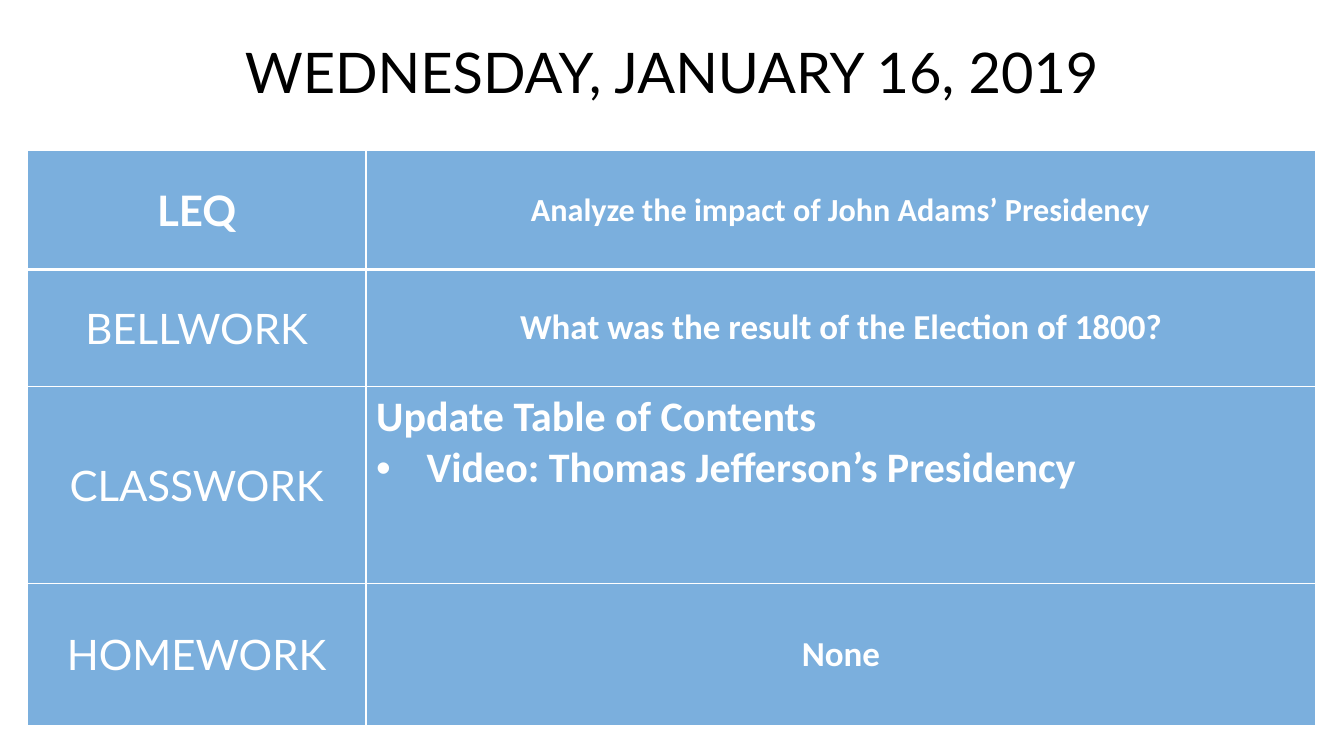
from pptx import Presentation
from pptx.dml.color import RGBColor as RGB
from pptx.enum.text import MSO_ANCHOR as ANCHOR, MSO_AUTO_SIZE as AUTO, PP_ALIGN as ALIGN
from pptx.oxml import parse_xml
from pptx.oxml.ns import nsdecls, qn
from pptx.util import Pt

COLORS = {"text": "FFFFFF", "title": "000000", "cell": "5B9BD5", "panel": "FFFFFF", "border": "FFFFFF"}
LABEL = {"name": "Lato", "size": Pt(30), "bold": False}
HEAD = {**LABEL, "bold": True}
LEFT, WIDTH = 19.5, 920.5


def detail(size):
    return {"name": "Calibri", "size": Pt(size), "bold": True}


AGENDA = [
    (85, "LEQ", HEAD, ["Analyze the impact of John Adams’ Presidency"], 23),
    (83.5, "BELLWORK", LABEL, ["What was the result of the Election of 1800?"], 25),
    (141, "CLASSWORK", LABEL, ["Update Table of Contents", "Video: Thomas Jefferson’s Presidency"], 30),
    (101, "HOMEWORK", LABEL, ["None"], 25),
]


class Deck:
    """Holds the style and the current slide."""

    def __init__(self):
        self.prs = Presentation()
        self.prs.slide_width, self.prs.slide_height = Pt(960), Pt(540)
        self.s = self.prs.slides.add_slide(self.prs.slide_layouts[5])

    def fill(self, obj, props, color, alpha):
        obj.fill.solid()
        obj.fill.fore_color.rgb = RGB.from_string(COLORS[color])
        clr = next(props.iter(qn("a:srgbClr")))
        clr.append(parse_xml(f'<a:alpha {nsdecls("a")} val="{alpha * 1000}"/>'))

    def text(self, p, text, color, align, fmt):
        p.alignment = align
        r = p.add_run()
        r.text = text
        r.font.color.rgb = RGB.from_string(COLORS[color])
        for key, value in fmt.items():
            setattr(r.font, key, value)

    def title(self, text, top, height):
        sp = self.s.shapes.title
        sp.left, sp.top, sp.width, sp.height = Pt(LEFT), Pt(top), Pt(WIDTH), Pt(height)
        tf = sp.text_frame
        for key, value in {"auto_size": AUTO.NONE, "word_wrap": True, "vertical_anchor": ANCHOR.MIDDLE}.items():
            setattr(tf, key, value)
        self.text(tf.paragraphs[0], text, "title", ALIGN.CENTER, {"name": "Lato", "size": Pt(40)})
        self.fill(sp, sp._element.spPr, "panel", 65)

    def borders(self, cell, top, bottom):
        tcPr = cell._tc.get_or_add_tcPr()
        for i, (side, width) in enumerate({"L": 1, "R": 1, "T": top, "B": bottom}.items()):
            tcPr.insert(i, parse_xml(
                f'<a:ln{side} {nsdecls("a")} w="{int(Pt(width))}"><a:solidFill>'
                f'<a:srgbClr val="{COLORS["border"]}"/></a:solidFill></a:ln{side}>'))

    def bullet(self, p, indent):
        pPr = p._p.get_or_add_pPr()
        pPr.set("marL", str(int(Pt(indent))))
        pPr.set("indent", str(int(Pt(-indent))))
        pPr.append(parse_xml(f'<a:buFont {nsdecls("a")} typeface="Arial"/>'))
        pPr.append(parse_xml(f'<a:buChar {nsdecls("a")} char="•"/>'))

    def cell(self, cell, lines, fmt):
        is_list = len(lines) > 1
        cell.vertical_anchor = ANCHOR.TOP if is_list else ANCHOR.MIDDLE
        tf = cell.text_frame
        for i, line in enumerate(lines):
            p = tf.add_paragraph() if i else tf.paragraphs[0]
            if i:
                self.bullet(p, 36)
            self.text(p, line, "text", ALIGN.LEFT if is_list else ALIGN.CENTER, fmt)
        self.fill(cell, cell._tc.get_or_add_tcPr(), "cell", 80)

    def table(self, rows, top, widths):
        height = sum(row[0] for row in rows)
        tbl = self.s.shapes.add_table(len(rows), 2, Pt(LEFT), Pt(top), Pt(WIDTH), Pt(height)).table
        tbl.horz_banding = False
        for col, width in zip(tbl.columns, widths):
            col.width = Pt(width)
        for i, (height, label, style, lines, size) in enumerate(rows):
            tbl.rows[i].height = Pt(height)
            self.cell(tbl.cell(i, 0), [label], style)
            self.cell(tbl.cell(i, 1), lines, detail(size))
            for cell in tbl.rows[i].cells:
                self.borders(cell, 3 if i == 1 else 1, 3 if i == 0 else 1)


def main():
    deck = Deck()
    deck.title("WEDNESDAY, JANUARY 16, 2019", 14.5, 72)
    deck.table(AGENDA, 107.5, (242, WIDTH - 242))
    deck.prs.save("out.pptx")


if __name__ == "__main__":
    main()
